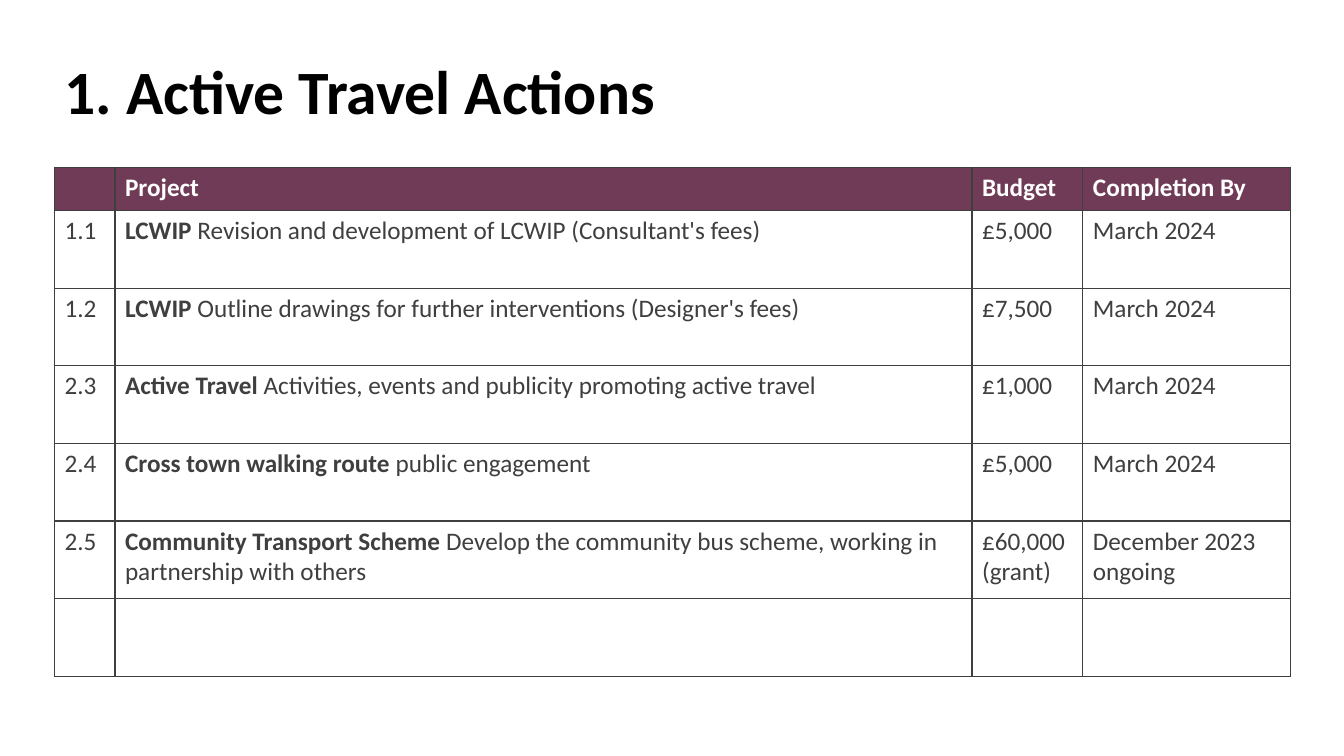
from pptx import Presentation
from pptx.dml.color import RGBColor
from pptx.enum.text import MSO_ANCHOR, MSO_AUTO_SIZE, PP_ALIGN
from pptx.oxml import parse_xml
from pptx.oxml.ns import nsdecls
from pptx.util import Inches, Pt

BLACK = RGBColor(0x00, 0x00, 0x00)
WHITE = RGBColor(0xFF, 0xFF, 0xFF)
GREY = RGBColor(0x3F, 0x3F, 0x3F)
PLUM = RGBColor(0x70, 0x3B, 0x56)
FONT = "Calibri"

COL_WIDTHS = [0.6, 8.5, 1.1, 2.06]
HEADER_HEIGHT = 0.43
ROW_HEIGHT = 0.77
HEADINGS = ["", "Project", "Budget", "Completion By"]
ACTIONS = [
    ("1.1", "LCWIP ", "Revision and development of LCWIP (Consultant's fees)",
     "£5,000", "March 2024"),
    ("1.2", "LCWIP ", "Outline drawings for further interventions (Designer's fees)",
     "£7,500", "March 2024"),
    ("2.3", "Active Travel ", "Activities, events and publicity promoting active travel",
     "£1,000", "March 2024"),
    ("2.4", "Cross town walking route ", "public engagement",
     "£5,000", "March 2024"),
    ("2.5", "Community Transport Scheme ",
     "Develop the community bus scheme, working in partnership with others",
     "£60,000 (grant)", "December 2023 ongoing"),
    ("", "", "", "", ""),
]


def add_text(p, text, size=18, color=GREY, bold=False):
    if not text:
        p.font.size = Pt(size)
        return
    r = p.add_run()
    r.text = text
    r.font.name = FONT
    r.font.size = Pt(size)
    r.font.bold = bold
    r.font.color.rgb = color


def set_borders(cell, color=GREY, width=1):
    tc_pr = cell._tc.get_or_add_tcPr()
    for side in ("lnL", "lnR", "lnT", "lnB"):
        tc_pr.append(parse_xml(
            f'<a:{side} {nsdecls("a")} w="{Pt(width)}"><a:solidFill>'
            f'<a:srgbClr val="{color}"/></a:solidFill></a:{side}>'))


def add_title(s, text, left, top, width, height):
    sp = s.shapes.title
    sp.left, sp.top = Inches(left), Inches(top)
    sp.width, sp.height = Inches(width), Inches(height)
    tf = sp.text_frame
    tf.word_wrap = True
    tf.auto_size = MSO_AUTO_SIZE.NONE
    tf.vertical_anchor = MSO_ANCHOR.MIDDLE
    p = tf.paragraphs[0]
    p.alignment = PP_ALIGN.LEFT
    p.line_spacing = 0.9
    add_text(p, text, size=44, color=BLACK, bold=True)


def add_actions_table(s, left, top, width, height):
    frame = s.shapes.add_table(len(ACTIONS) + 1, len(COL_WIDTHS), Inches(left),
                               Inches(top), Inches(width), Inches(height))
    table = frame.table
    table.horz_banding = False
    for col, col_width in zip(table.columns, COL_WIDTHS):
        col.width = Inches(col_width)
    for i, row in enumerate(table.rows):
        row.height = Inches(ROW_HEIGHT if i else HEADER_HEIGHT)
        for cell in row.cells:
            set_borders(cell)
            if i:
                cell.fill.background()
            else:
                cell.fill.solid()
                cell.fill.fore_color.rgb = PLUM

    for cell, heading in zip(table.rows[0].cells, HEADINGS):
        add_text(cell.text_frame.paragraphs[0], heading, color=WHITE, bold=True)
    for i, (number, name, detail, budget, date) in enumerate(ACTIONS, 1):
        paras = [c.text_frame.paragraphs[0] for c in table.rows[i].cells]
        add_text(paras[0], number)
        add_text(paras[1], name, bold=True)
        add_text(paras[1], detail)
        add_text(paras[2], budget)
        add_text(paras[3], date)


def main():
    prs = Presentation()
    prs.slide_width, prs.slide_height = Inches(13.33), Inches(7.5)
    s = prs.slides.add_slide(prs.slide_layouts[5])
    add_title(s, "1. Active Travel Actions", 0.54, 0.21, 11.88, 1.45)
    add_actions_table(s, 0.54, 1.66, sum(COL_WIDTHS),
                      HEADER_HEIGHT + ROW_HEIGHT * len(ACTIONS))
    prs.save("out.pptx")


if __name__ == "__main__":
    main()
